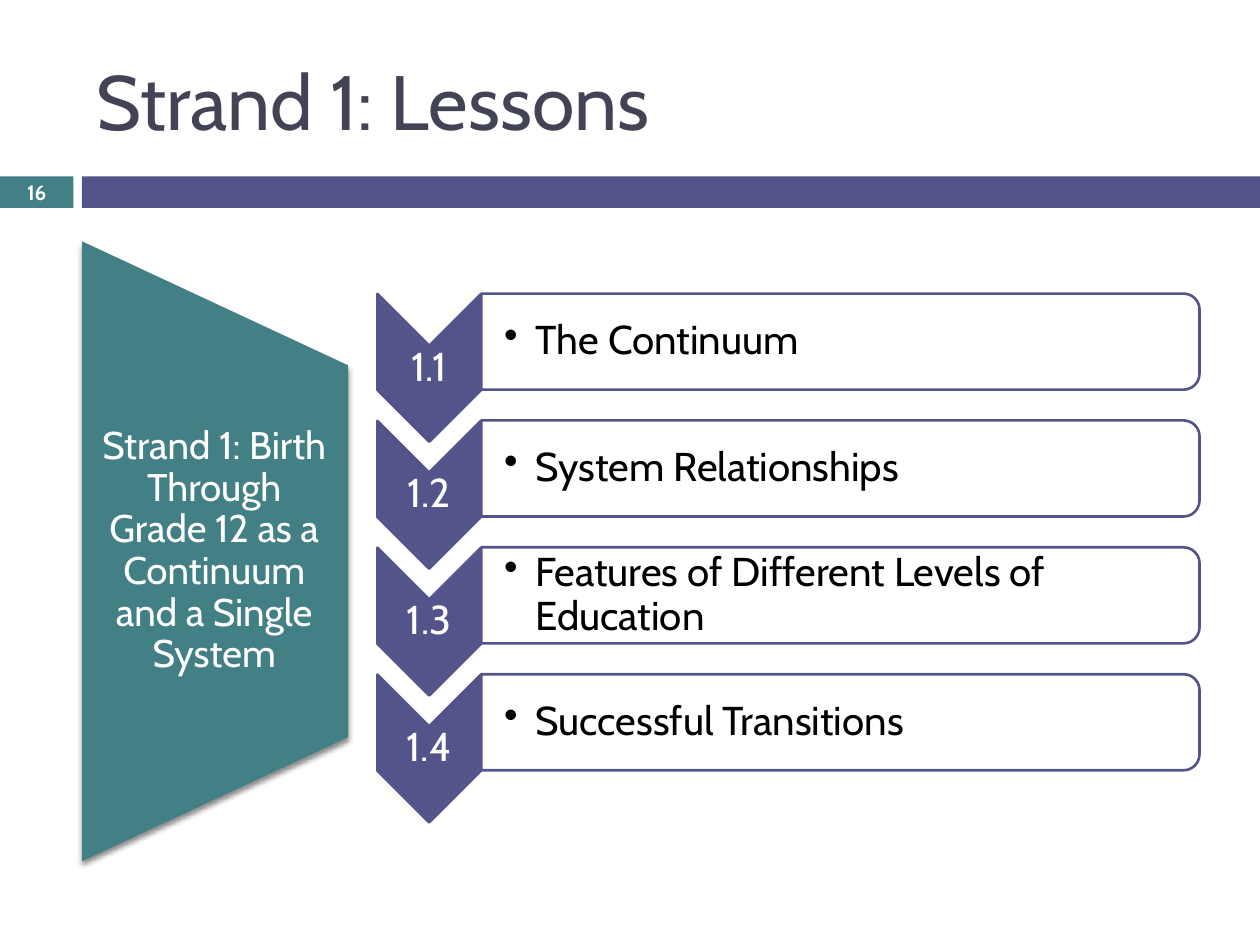
import pptx
import pptx.dml.color
import pptx.enum.shapes
import pptx.enum.text
import pptx.oxml.ns
import pptx.util
from lxml import etree

Pt = pptx.util.Pt
SHAPES = pptx.enum.shapes.MSO_SHAPE
ALIGN = pptx.enum.text.PP_ALIGN
MIDDLE = pptx.enum.text.MSO_ANCHOR.MIDDLE
qn = pptx.oxml.ns.qn

FONT = "Cabin"
TEAL, INDIGO, SLATE = "438086", "53548A", "424456"
WHITE, BLACK = "FFFFFF", "000000"

LESSONS = [
    ("1.1", "The Continuum"),
    ("1.2", "System Relationships"),
    ("1.3", "Features of Different Levels of Education"),
    ("1.4", "Successful Transitions"),
]
FIRST_LESSON_TOP, LESSON_PITCH = 167.8, 72.5


def color(hex_string):
    return pptx.dml.color.RGBColor.from_string(hex_string)


def add_block(slide, kind, box, fill, line=None, rotation=0):
    block = slide.shapes.add_shape(kind, *map(Pt, box))
    block.shadow.inherit = False
    block.rotation = rotation
    block.fill.solid()
    block.fill.fore_color.rgb = color(fill)
    if line:
        block.line.color.rgb = color(line)
        block.line.width = Pt(1.5)
    else:
        block.line.fill.background()
    return block


def style_text(paragraph, size, text_color, align, bold=False, spacing=None):
    paragraph.alignment = align
    paragraph.line_spacing = spacing
    paragraph.font.name = FONT
    paragraph.font.size = Pt(size)
    paragraph.font.bold = bold
    paragraph.font.color.rgb = color(text_color)


def add_label(slide, box, text, size, text_color=WHITE, align=ALIGN.CENTER,
              insets=(1.4, 1.4, 1.4, 1.4), bold=False, spacing=0.9):
    """Insets run left, top, right, bottom."""
    frame = slide.shapes.add_textbox(*map(Pt, box)).text_frame
    frame.word_wrap = True
    frame.vertical_anchor = MIDDLE
    (frame.margin_left, frame.margin_top,
     frame.margin_right, frame.margin_bottom) = map(Pt, insets)
    frame.text = text
    paragraph = frame.paragraphs[0]
    style_text(paragraph, size, text_color, align, bold, spacing)
    return paragraph


def add_bullet(paragraph, indent):
    properties = paragraph._p.get_or_add_pPr()
    properties.set("marL", str(Pt(indent)))
    properties.set("indent", str(-Pt(indent)))
    bullet = etree.Element(qn("a:buChar"), char="•")
    properties.insert_element_before(bullet, "a:tabLst", "a:defRPr", "a:extLst")


def add_drop_shadow(block):
    effects = block._element.spPr.find(qn("a:effectLst"))
    shadow = etree.SubElement(effects, qn("a:outerShdw"), blurRad=str(Pt(3)),
                              dist=str(Pt(2.4)), dir="5400000", rotWithShape="0")
    shade = etree.SubElement(shadow, qn("a:srgbClr"), val=BLACK)
    etree.SubElement(shade, qn("a:alpha"), val="45000")


def add_header(slide):
    add_block(slide, SHAPES.RECTANGLE, (0, 100.8, 42, 18), TEAL)
    add_block(slide, SHAPES.RECTANGLE, (46.8, 100.8, 673.2, 18), INDIGO)
    add_label(slide, (0, 100, 42, 19.5), "16", 11.9, bold=True, spacing=None)

    title = slide.shapes.title
    title.left, title.top, title.width, title.height = map(Pt, (48, 18, 642, 78))
    title.text_frame.text = "Strand 1: Lessons"
    title.text_frame.vertical_anchor = MIDDLE
    style_text(title.text_frame.paragraphs[0], 44, SLATE, ALIGN.LEFT)


def add_strand(slide):
    panel = add_block(slide, SHAPES.FLOWCHART_MANUAL_OPERATION,
                      (-54.2, 239, 354.2, 152), TEAL, rotation=270)
    add_drop_shadow(panel)
    add_label(slide, (46.8, 208.8, 152, 212.4),
              "Strand 1: Birth Through Grade 12 as a Continuum and a Single System",
              22, insets=(10.8, 0, 11.5, 0))


def add_lesson(slide, top, number, name):
    # Chevron and card are turned a quarter, so their boxes lie crosswise.
    add_block(slide, SHAPES.CHEVRON, (203, top + 12.8, 84.5, 59.2),
              INDIGO, INDIGO, rotation=90)
    add_label(slide, (215.7, top + 29.8, 59.2, 25.4), number, 23)
    add_block(slide, SHAPES.ROUND_2_SAME_RECTANGLE, (452.8, top - 177.8, 54.9, 410.4),
              WHITE, INDIGO, rotation=90)
    paragraph = add_label(slide, (275, top + 2.8, 408, 49.6), name, 23, BLACK,
                          ALIGN.LEFT, (13, 1.4, 1.4, 1.4))
    add_bullet(paragraph, 18)


def main():
    presentation = pptx.Presentation()
    presentation.slide_width, presentation.slide_height = Pt(720), Pt(540)
    slide = presentation.slides.add_slide(presentation.slide_layouts[5])
    add_header(slide)
    add_strand(slide)
    for index, (number, name) in enumerate(LESSONS):
        add_lesson(slide, FIRST_LESSON_TOP + index * LESSON_PITCH, number, name)
    presentation.save("out.pptx")


if __name__ == "__main__":
    main()
